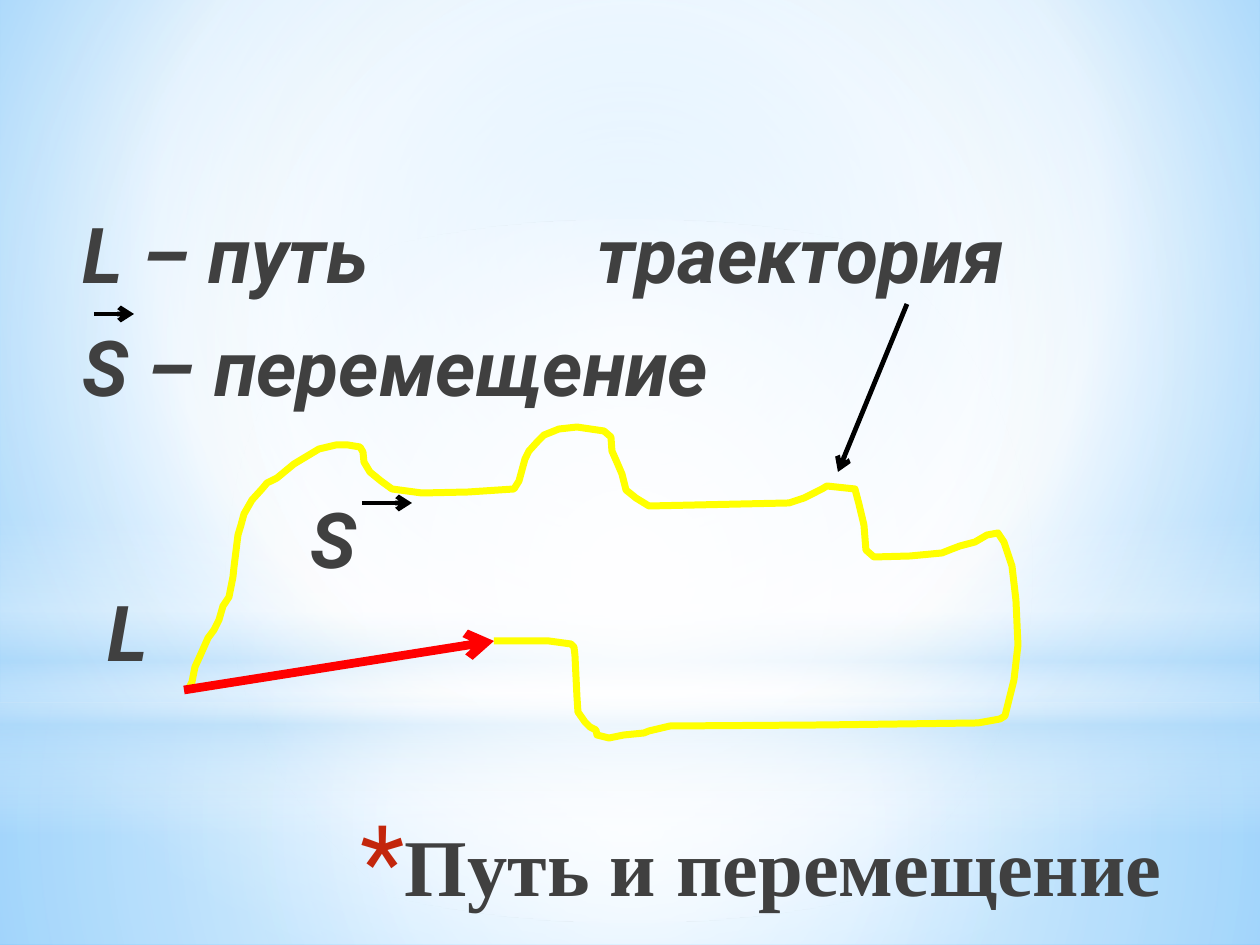
from lxml.etree import SubElement
from pptx import Presentation
from pptx.dml.color import RGBColor
from pptx.enum.shapes import MSO_CONNECTOR, MSO_SHAPE
from pptx.enum.text import PP_ALIGN
from pptx.oxml.ns import qn
from pptx.util import Pt

PX = 914400 // 126
WIDTH, HEIGHT = 1260, 945
HORIZON = 703

WHITE = RGBColor(0xFF, 0xFF, 0xFF)
BLACK = RGBColor(0x00, 0x00, 0x00)
RED = RGBColor(0xFF, 0x00, 0x00)
YELLOW = RGBColor(0xFF, 0xFF, 0x00)
CHARCOAL = RGBColor(0x40, 0x40, 0x40)
BRICK = RGBColor(0xC3, 0x26, 0x0C)
PALE_BLUE = RGBColor(0xB4, 0xDC, 0xFA)
SKY = RGBColor(0x9E, 0xD5, 0xFF)
DEEP_SKY = RGBColor(0x5B, 0xB9, 0xFF)

CENTRE = (50, 50, 50, 50)

BACKDROP = [
    (MSO_SHAPE.RECTANGLE, (0, HORIZON, WIDTH, HEIGHT - HORIZON),
     [(0, WHITE, 91), (37, WHITE, 76), (100, PALE_BLUE, 79)], CENTRE),
    (MSO_SHAPE.RECTANGLE, (0, 0, WIDTH, HORIZON),
     [(0, WHITE, 89), (48, WHITE, 62), (100, PALE_BLUE, 79)], CENTRE),
    (MSO_SHAPE.RECTANGLE, (0, 519, WIDTH, 315),
     [(0, WHITE, 0), (29, WHITE, 30), (45, PALE_BLUE, 40),
      (55, WHITE, 26), (65, PALE_BLUE, 60), (100, WHITE, 0)], None),
    (MSO_SHAPE.OVAL, (0, 220, WIDTH, HORIZON),
     [(0, WHITE, 100), (56, WHITE, 0)], CENTRE),
]

LABELS = [
    ("L – путь", 83, 207, 400),
    ("траектория", 597, 207, 500),
    ("S – перемещение", 83, 320, 760),
    ("S", 311, 492, 80),
    ("L", 107, 585, 80),
]

TRAJECTORY = [
    (189, 688), (192, 682), (195, 667), (200, 656), (208, 638), (214, 630),
    (219, 620), (223, 606), (229, 597), (233, 577), (234, 567), (238, 535),
    (241, 525), (244, 514), (252, 500), (262, 489), (267, 483), (277, 478),
    (294, 464), (319, 449), (336, 445), (348, 445), (360, 447), (363, 452),
    (364, 462), (370, 472), (381, 481), (392, 489), (422, 493), (468, 492),
    (514, 489), (519, 481), (525, 459), (529, 451), (538, 441), (544, 435),
    (559, 429), (577, 427), (604, 431), (611, 437), (612, 451), (616, 460),
    (622, 474), (626, 490), (636, 498), (649, 506), (789, 503), (804, 498),
    (822, 489), (827, 486), (855, 489), (859, 504), (864, 525), (866, 550),
    (874, 557), (910, 556), (942, 553), (952, 549), (960, 546), (975, 542),
    (987, 535), (998, 533), (1004, 542), (1012, 566), (1016, 600),
    (1018, 645), (1014, 680), (1005, 716), (1000, 719), (978, 723),
    (824, 725), (670, 726), (649, 731), (644, 733), (624, 735), (609, 738),
    (597, 735), (596, 730), (590, 727), (585, 722), (578, 712), (577, 697),
    (575, 655), (574, 647), (571, 644), (549, 641), (494, 641),
]

ARROWS = [
    ((184, 690), (494, 641), RED, 5),
    ((94, 314), (134, 314), BLACK, 2.75),
    ((362, 503), (412, 503), BLACK, 2.75),
    ((907, 304), (838, 472), BLACK, 2.75),
]


def to_emu(*lengths):
    return [length * PX for length in lengths]


def apply_gradient(element, stops, focus):
    solid = element.find(".//" + qn("a:solidFill"))
    gradient = solid.makeelement(qn("a:gradFill"), {"rotWithShape": "1"})
    solid.getparent().replace(solid, gradient)
    stop_list = SubElement(gradient, qn("a:gsLst"))
    for position, color, opacity in stops:
        stop = SubElement(stop_list, qn("a:gs"), pos=str(position * 1000))
        paint = SubElement(stop, qn("a:srgbClr"), val=str(color))
        if opacity < 100:
            SubElement(paint, qn("a:alpha"), val=str(opacity * 1000))
    if focus is None:
        SubElement(gradient, qn("a:lin"), ang="5400000", scaled="0")
    else:
        circle = SubElement(gradient, qn("a:path"), {"path": "circle"})
        edges = {side: str(share * 1000) for side, share in zip("ltrb", focus)}
        SubElement(circle, qn("a:fillToRect"), edges)


def paint_background(slide):
    slide.background.fill.solid()
    stops = [(0, SKY, 100), (60, WHITE, 100), (100, DEEP_SKY, 100)]
    apply_gradient(slide.element, stops, (20, 10, 20, 60))


def add_glow(slide, kind, box, stops, focus):
    shape = slide.shapes.add_shape(kind, *to_emu(*box))
    shape.shadow.inherit = False
    shape.fill.solid()
    shape.line.fill.background()
    apply_gradient(shape.element, stops, focus)


def add_text(slide, text, box, font_name, size):
    frame = slide.shapes.add_textbox(*to_emu(*box)).text_frame
    frame.word_wrap = True
    frame.margin_left = frame.margin_right = 0
    frame.margin_top = frame.margin_bottom = 0
    paragraph = frame.paragraphs[0]
    paragraph.text = text
    font = paragraph.font
    font.name, font.size, font.bold = font_name, Pt(size), True
    font.color.rgb = CHARCOAL
    return paragraph


def add_title(slide):
    paragraph = add_text(slide, "Путь и перемещение", (325, 816, 872, 120),
                         "Times New Roman", 46)
    paragraph.alignment = PP_ALIGN.CENTER
    properties = paragraph._p.get_or_add_pPr()
    properties.set("marL", str(44 * PX))
    properties.set("indent", str(-44 * PX))
    bullet_color = properties.makeelement(qn("a:buClr"), {})
    properties.insert(0, bullet_color)
    SubElement(bullet_color, qn("a:srgbClr"), val=str(BRICK))
    bullet_parts = [("a:buSzPct", {"val": "128000"}),
                    ("a:buFont", {"typeface": "Roboto"}),
                    ("a:buChar", {"char": "*"})]
    for index, (tag, attributes) in enumerate(bullet_parts, start=1):
        properties.insert(index, properties.makeelement(qn(tag), attributes))


def add_trajectory(slide):
    builder = slide.shapes.build_freeform(*TRAJECTORY[0], scale=PX)
    builder.add_line_segments(TRAJECTORY[1:], close=False)
    shape = builder.convert_to_shape()
    shape.shadow.inherit = False
    shape.fill.background()
    shape.line.color.rgb = YELLOW
    shape.line.width = Pt(4)
    SubElement(shape.line._get_or_add_ln(), qn("a:round"))


def add_arrow(slide, start, end, color, width):
    connector = slide.shapes.add_connector(
        MSO_CONNECTOR.STRAIGHT, *to_emu(*start, *end))
    connector.line.color.rgb = color
    connector.line.width = Pt(width)
    SubElement(connector.line._get_or_add_ln(), qn("a:tailEnd"), type="arrow")
    SubElement(connector.element.spPr, qn("a:effectLst"))


def main():
    presentation = Presentation()
    presentation.slide_width, presentation.slide_height = to_emu(WIDTH, HEIGHT)
    slide = presentation.slides.add_slide(presentation.slide_layouts[6])
    paint_background(slide)
    for glow in BACKDROP:
        add_glow(slide, *glow)
    add_title(slide)
    for text, left, top, width in LABELS:
        label = add_text(slide, text, (left, top, width, 90), "Roboto", 44)
        label.font.italic = True
    add_trajectory(slide)
    for arrow in ARROWS:
        add_arrow(slide, *arrow)
    presentation.save("out.pptx")


if __name__ == "__main__":
    main()
